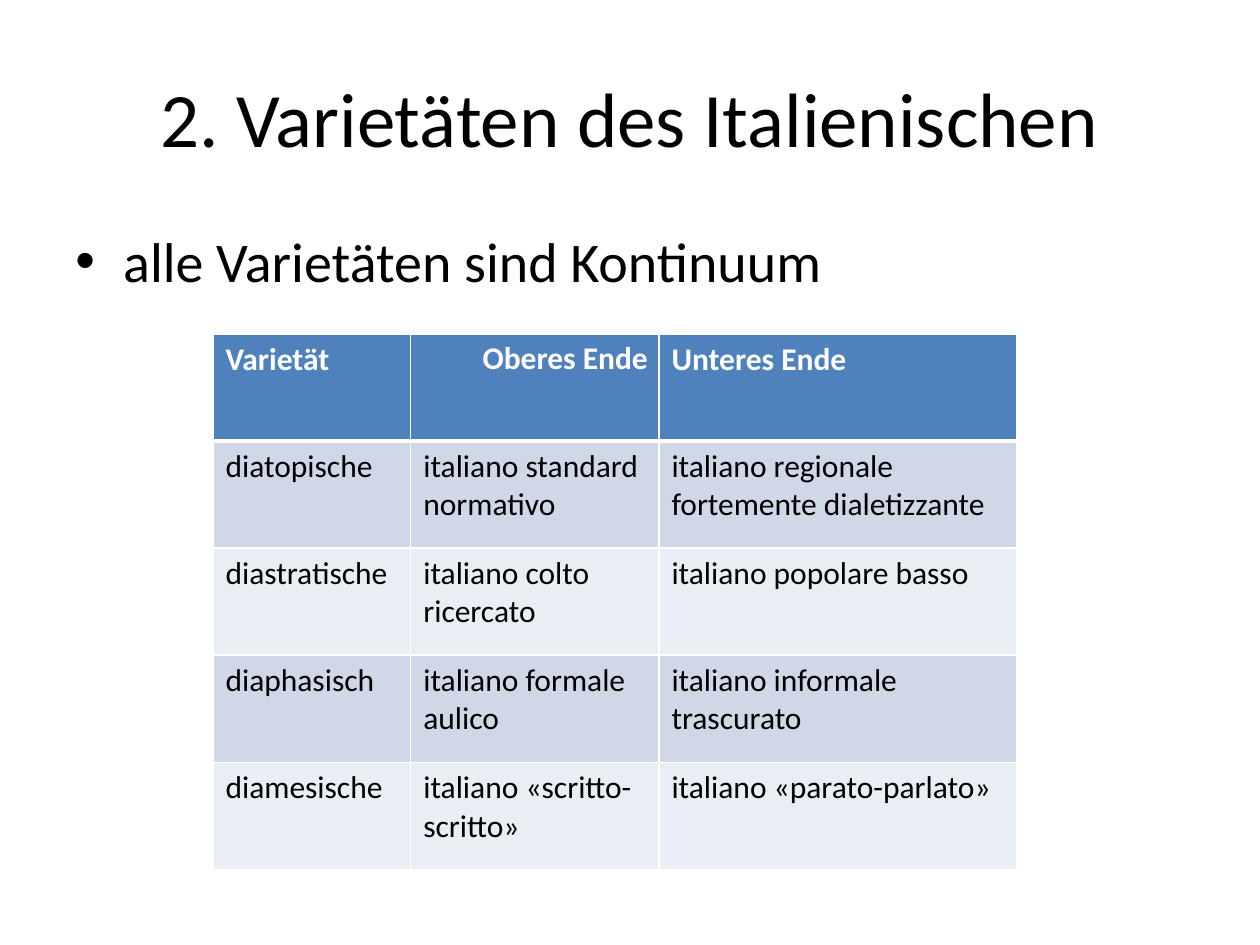
from lxml import etree
from pptx import Presentation
from pptx.dml.color import RGBColor
from pptx.enum.text import MSO_ANCHOR, PP_ALIGN
from pptx.oxml.ns import qn
from pptx.util import Inches, Pt

MIDDLE = MSO_ANCHOR.MIDDLE
CENTER = PP_ALIGN.CENTER
BLACK, WHITE = "000000", "FFFFFF"
HEAD, BANDS = "4F81BD", ("D0D8E8", "E9EDF4")
WIDTHS = (1.57, 1.97, 2.84)
ROWS = (
    ("Varietät", "Oberes Ende", "Unteres Ende"),
    ("diatopische", "italiano standard normativo",
     "italiano regionale fortemente dialetizzante"),
    ("diastratische", "italiano colto ricercato", "italiano popolare basso"),
    ("diaphasisch", "italiano formale aulico", "italiano informale trascurato"),
    ("diamesische", "italiano «scritto-scritto»", "italiano «parato-parlato»"),
)


def color(value):
    return RGBColor.from_string(value)


def add_run(para, text, size, tint=BLACK, bold=False):
    run = para.add_run()
    run.text = text
    run.font.name = "Calibri"
    run.font.size = Pt(size)
    run.font.bold = bold
    run.font.color.rgb = color(tint)


def indent(para, left, first=0):
    """Set the left margin and first-line indent in inches."""
    props = para._p.get_or_add_pPr()
    props.set("marL", str(Inches(left)))
    props.set("indent", str(Inches(first)))
    return props


def add_title(slide, left, top, width, height):
    title = slide.shapes.title
    title.left, title.top = Inches(left), Inches(top)
    title.width, title.height = Inches(width), Inches(height)
    frame = title.text_frame
    frame.vertical_anchor = MIDDLE
    para = frame.paragraphs[0]
    para.alignment = CENTER
    add_run(para, "2. Varietäten des Italienischen", 44)


def add_body(slide, left, top, width, height):
    box = slide.shapes.add_textbox(
        Inches(left), Inches(top), Inches(width), Inches(height))
    frame = box.text_frame
    frame.word_wrap = True
    para = frame.paragraphs[0]
    para.space_before = Pt(6.4)
    props = indent(para, 0.38, -0.38)
    etree.SubElement(props, qn("a:buFont"), typeface="Arial")
    etree.SubElement(props, qn("a:buChar"), char="•")
    add_run(para, "alle Varietäten sind Kontinuum", 32)


def add_edges(cell, top, bottom):
    """Draw white cell borders; top and bottom widths are in points."""
    props = cell._tc.get_or_add_tcPr()
    for side, width in (("L", 1), ("R", 1), ("T", top), ("B", bottom)):
        line = etree.SubElement(props, qn(f"a:ln{side}"), w=str(Pt(width)))
        fill = etree.SubElement(line, qn("a:solidFill"))
        etree.SubElement(fill, qn("a:srgbClr"), val=WHITE)


def fill_cell(cell, text, row):
    head = row == 0
    add_edges(cell, 3 if row == 1 else 1, 3 if head else 1)
    cell.fill.solid()
    cell.fill.fore_color.rgb = color(HEAD if head else BANDS[(row - 1) % 2])
    add_run(cell.text_frame.paragraphs[0], text, 18,
            WHITE if head else BLACK, head)


def add_grid(slide, left, top, width, height):
    frame = slide.shapes.add_table(
        len(ROWS), len(WIDTHS),
        Inches(left), Inches(top), Inches(width), Inches(height))
    table = frame.table
    for col, size in zip(table.columns, WIDTHS):
        col.width = Inches(size)
    for row, texts in enumerate(ROWS):
        for col, text in enumerate(texts):
            fill_cell(table.cell(row, col), text, row)

    upper = table.cell(0, 1)
    upper.margin_left = upper.margin_right = Inches(0.07)
    upper.margin_top = upper.margin_bottom = 0
    para = upper.text_frame.paragraphs[0]
    para.line_spacing = 1.15
    indent(para, 0.5)


def main():
    deck = Presentation()
    deck.slide_width, deck.slide_height = Inches(10), Inches(7.5)
    slide = deck.slides.add_slide(deck.slide_layouts[5])
    add_title(slide, 0.5, 0.3, 9, 1.25)
    add_body(slide, 0.5, 1.75, 9, 4.95)
    add_grid(slide, 1.69, 2.65, sum(WIDTHS), 4.25)
    deck.save("out.pptx")


if __name__ == "__main__":
    main()
